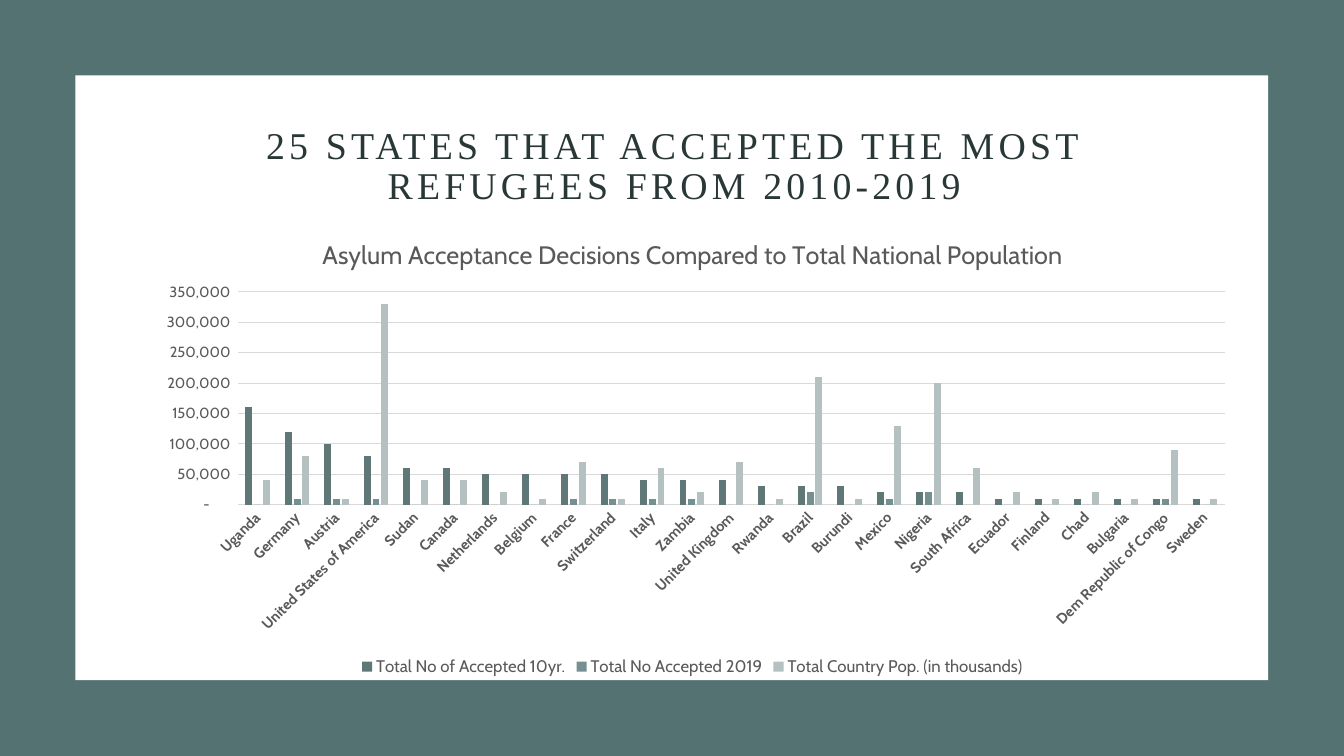
from lxml import etree
from pptx import Presentation
from pptx import util as u
from pptx.chart.data import CategoryChartData
from pptx.dml.color import RGBColor
from pptx.enum import chart as ch
from pptx.enum import shapes, text
from pptx.oxml import parse_xml
from pptx.oxml.ns import nsdecls

Cm = u.Cm
GREY, RULE = "595959", "D9D9D9"


def hue(code):
    return RGBColor.from_string(code)


def write(frame, words, font="Cabin", size=12, color=GREY, track=0, lead=None):
    para = frame.paragraphs[0]
    para.alignment = text.PP_ALIGN.CENTER
    if lead:
        para.line_spacing = lead
    run = para.add_run()
    run.text = words
    run.font.name, run.font.size, run.font.bold = font, u.Pt(size), False
    run.font.color.rgb = hue(color)
    if track:
        run.font._element.set("spc", str(track * 100))


prs = Presentation()
prs.slide_width, prs.slide_height = Cm(33.87), Cm(19.05)
slide = prs.slides.add_slide(prs.slide_layouts[6])

# Green frame and white panel
for left, top, wide, high, color in [
    (0, 0, 33.87, 19.05, "557272"),
    (1.9, 1.9, 30.06, 15.24, "FFFFFF"),
]:
    panel = slide.shapes.add_shape(
        shapes.MSO_SHAPE.RECTANGLE, Cm(left), Cm(top), Cm(wide), Cm(high))
    panel.shadow.inherit = False
    panel.fill.solid()
    panel.fill.fore_color.rgb = hue(color)
    panel.line.fill.background()

# Title
box = slide.shapes.add_textbox(Cm(3.81), Cm(2.97), Cm(26.37), Cm(2.49))
frame = box.text_frame
frame.word_wrap = True
frame.vertical_anchor = text.MSO_ANCHOR.MIDDLE
write(frame, "25 STATES THAT ACCEPTED THE MOST REFUGEES FROM 2010-2019",
      font="Times New Roman", size=27, color="293737", track=3, lead=0.9)

# Chart data, in tens of thousands
states = [
    "Uganda", "Germany", "Austria", "United States of America", "Sudan",
    "Canada", "Netherlands", "Belgium", "France", "Switzerland", "Italy",
    "Zambia", "United Kingdom", "Rwanda", "Brazil", "Burundi", "Mexico",
    "Nigeria", "South Africa", "Ecuador", "Finland", "Chad", "Bulgaria",
    "Dem Republic of Congo", "Sweden",
]
series = [
    ("Total No of Accepted 10yr.", "607777",
     [16, 12, 10, 8, 6, 6, 5, 5, 5, 5, 4, 4, 4, 3, 3, 3, 2, 2, 2, 1, 1, 1, 1, 1, 1]),
    ("Total No Accepted 2019", "749090",
     [0, 1, 1, 1, 0, 0, 0, 0, 1, 1, 1, 1, 0, 0, 2, 0, 1, 2, 0, 0, 0, 0, 0, 1, 0]),
    ("Total Country Pop. (in thousands)", "B5C1C1",
     [4, 8, 1, 33, 4, 4, 2, 1, 7, 1, 6, 2, 7, 1, 21, 1, 13, 20, 6, 2, 1, 2, 1, 9, 1]),
]
style = '_(* #,##0_);_(* \\(#,##0\\);_(* "-"??_);_(@_)'
data = CategoryChartData(number_format=style)
data.categories = states
for name, color, counts in series:
    data.add_series(name, [n * 10000 for n in counts])

# Column chart
chart = slide.shapes.add_chart(
    ch.XL_CHART_TYPE.COLUMN_CLUSTERED,
    Cm(3.48), Cm(5.49), Cm(27.94), Cm(11.66), data).chart
chart.font.name, chart.font.size = "Cabin", u.Pt(10)
chart.has_title = True
write(chart.chart_title.text_frame,
      "Asylum Acceptance Decisions Compared to Total National Population", size=18)
chart.chart_title.include_in_layout = False

plot = chart.plots[0]
plot.gap_width, plot.overlap, plot.vary_by_categories = 219, -27, False
for bar, (name, color, counts) in zip(plot.series, series):
    bar.format.fill.solid()
    bar.format.fill.fore_color.rgb = hue(color)

# Axes and legend
cat, val = chart.category_axis, chart.value_axis
chart.has_legend = True
key = chart.legend
key.position, key.include_in_layout = ch.XL_LEGEND_POSITION.BOTTOM, False
for font, size in [(cat.tick_labels.font, 10.5), (val.tick_labels.font, 10.5),
                   (key.font, 12)]:
    font.name, font.size, font.color.rgb = "Cabin", u.Pt(size), hue(GREY)
for axis in (cat, val):
    axis.major_tick_mark = axis.minor_tick_mark = ch.XL_TICK_MARK.NONE
cat.tick_labels.font.bold = True
cat._element.txPr.find("{*}bodyPr").set("rot", "-2700000")
val.minimum_scale, val.maximum_scale, val.major_unit = 0, 350000, 50000
val.tick_labels.number_format = style
val.tick_labels.number_format_is_linked = False
val.format.line.fill.background()
for line in (cat.format.line, val.major_gridlines.format.line):
    line.color.rgb, line.width = hue(RULE), u.Pt(0.75)

# Plot area inside the chart
area = chart._chartSpace.chart.plotArea
for old in area.findall("{*}layout"):
    area.remove(old)
layout = parse_xml(f"<c:layout {nsdecls('c')}><c:manualLayout/></c:layout>")
for tag, value in [("layoutTarget", "inner"), ("xMode", "edge"), ("yMode", "edge"),
                   ("x", 0.09), ("y", 0.16), ("w", 0.89), ("h", 0.46)]:
    item = etree.SubElement(layout[0], f"{{{layout.nsmap['c']}}}{tag}")
    item.set("val", str(value))
area.insert(0, layout)

prs.save("out.pptx")
